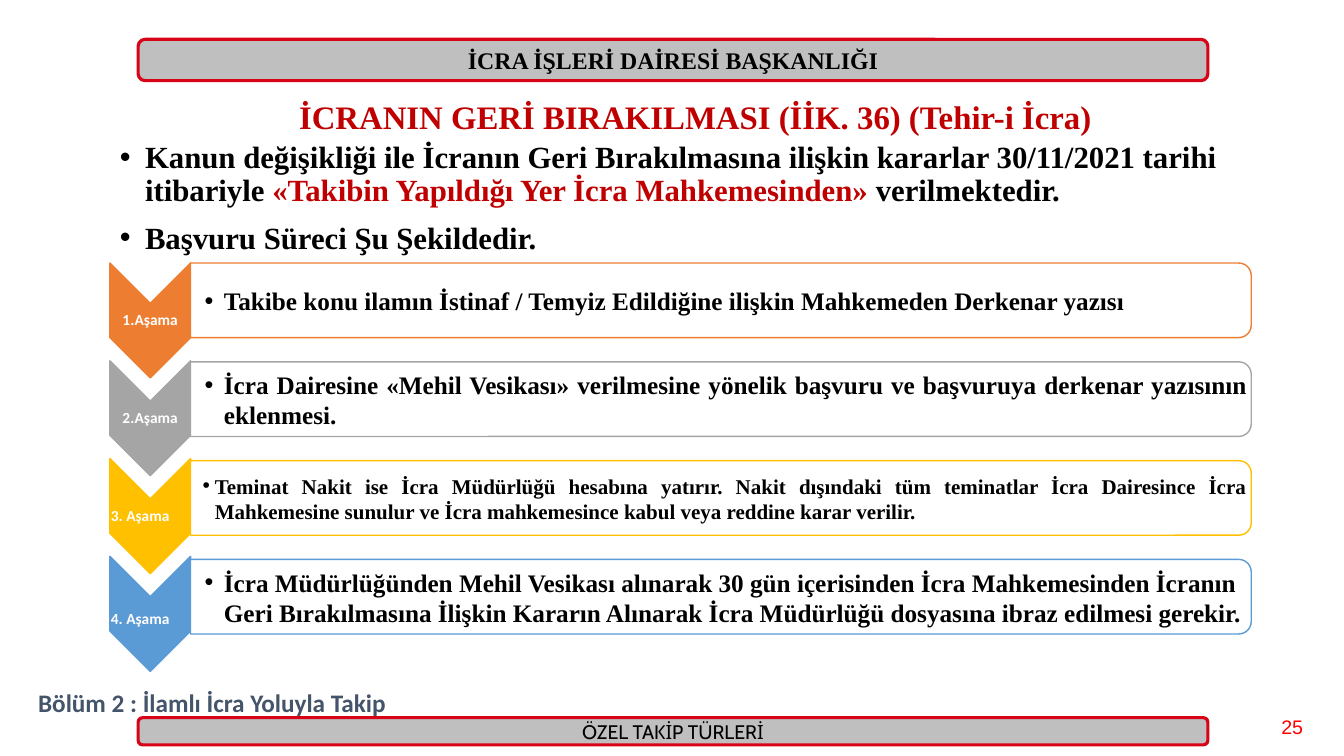
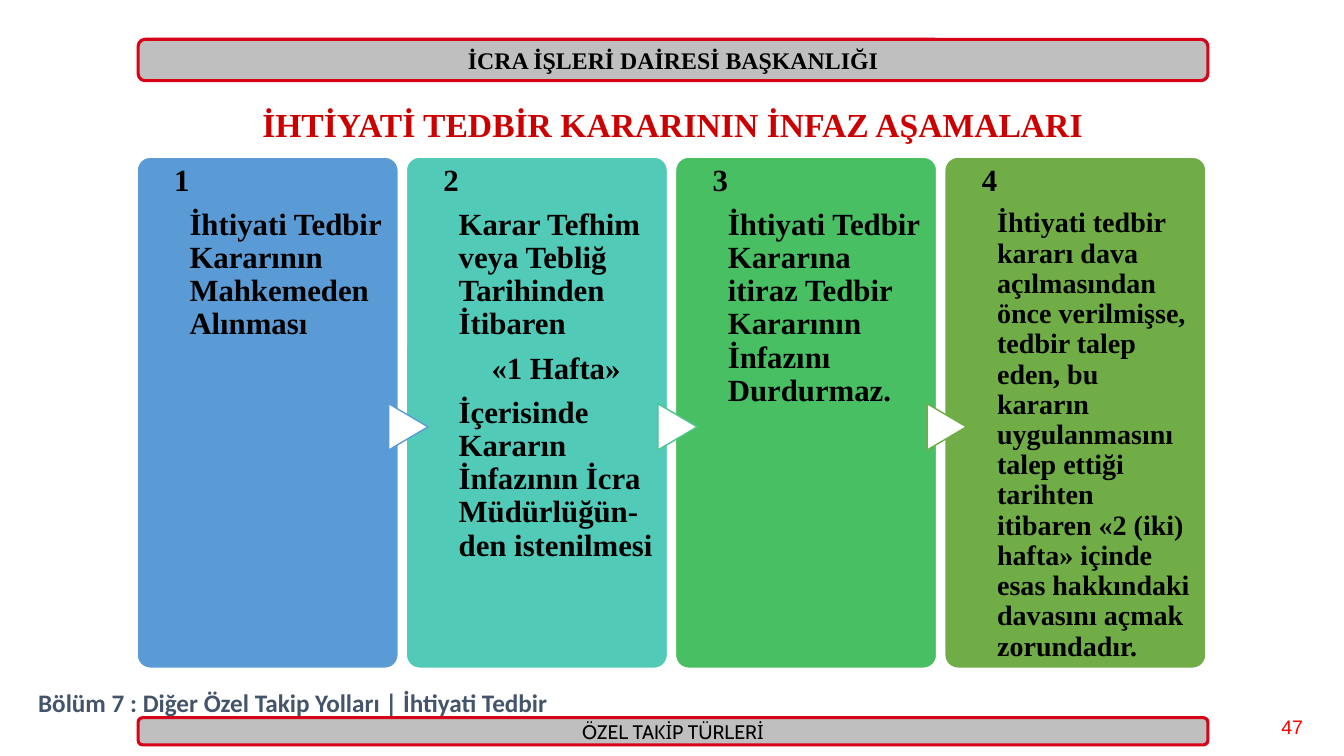
"""Build two slides on enforcement law: a staged application process and a four-step injunction."""
from dataclasses import dataclass, replace

from lxml import etree
from pptx import Presentation
from pptx.dml.color import RGBColor
from pptx.enum.shapes import MSO_SHAPE
from pptx.enum.text import MSO_ANCHOR, PP_ALIGN
from pptx.oxml.ns import qn
from pptx.util import Inches, Pt

ROUNDED = MSO_SHAPE.ROUNDED_RECTANGLE
CHEVRON = MSO_SHAPE.CHEVRON
ROUND_TOP = MSO_SHAPE.ROUND_2_SAME_RECTANGLE
TRIANGLE = MSO_SHAPE.FLOWCHART_EXTRACT
TOP, MIDDLE = MSO_ANCHOR.TOP, MSO_ANCHOR.MIDDLE
LEFT, CENTER, RIGHT, JUSTIFY = PP_ALIGN.LEFT, PP_ALIGN.CENTER, PP_ALIGN.RIGHT, PP_ALIGN.JUSTIFY

BLACK = RGBColor(0x00, 0x00, 0x00)
WHITE = RGBColor(0xFF, 0xFF, 0xFF)
BAND_GRAY = RGBColor(0xBF, 0xBF, 0xBF)
BAND_RED = RGBColor(0xD7, 0x03, 0x17)
NUMBER_RED = RGBColor(0xFF, 0x00, 0x00)
DARK_RED = RGBColor(0xC0, 0x00, 0x00)
TITLE_RED = RGBColor(0xCC, 0x00, 0x00)
SLATE = RGBColor(0x44, 0x54, 0x6A)
ORANGE = RGBColor(0xED, 0x7D, 0x31)
GRAY = RGBColor(0xA5, 0xA5, 0xA5)
GOLD = RGBColor(0xFF, 0xC0, 0x00)
BLUE = RGBColor(0x5B, 0x9B, 0xD5)
TEAL = RGBColor(0x52, 0xCA, 0xB8)
SEA_GREEN = RGBColor(0x4D, 0xC5, 0x8D)
GREEN = RGBColor(0x49, 0xBF, 0x64)
OLIVE = RGBColor(0x70, 0xAD, 0x47)

DEFAULT_INSETS = (0.1, 0.05, 0.1, 0.05)
THIN_INSETS = (0.01, 0.01, 0.01, 0.01)


@dataclass(frozen=True)
class TextStyle:
    """Hold the look of every paragraph in one box."""
    size: float
    color: RGBColor = BLACK
    font: str = "Times New Roman"
    bold: bool = True
    align: PP_ALIGN = LEFT
    line_spacing: float = 1.0
    space_before: float = 0
    space_after: float = 0
    bullet_indent: float = 0


HEADER = TextStyle(17, align=CENTER)
FOOTER = TextStyle(14, font="Cabin", bold=False, align=CENTER)
PAGE_NUMBER = TextStyle(14, NUMBER_RED, "Arial", False)
SECTION = TextStyle(18, SLATE, "Calibri")
TITLE = TextStyle(24, TITLE_RED, align=CENTER, line_spacing=0.9)
INTRO = TextStyle(22, line_spacing=0.9, space_before=10, bullet_indent=0.25)
STAGE_LABEL = TextStyle(11, WHITE, "Calibri", line_spacing=0.9)
STAGE_TEXT = TextStyle(18, align=JUSTIFY, bullet_indent=0.19)
CARD_TEXT = TextStyle(22, line_spacing=0.9, space_after=7.7)
CARD_NUMBER = replace(CARD_TEXT, align=RIGHT)

STAGES = [
    ("1.Aşama", "Takibe konu ilamın İstinaf / Temyiz Edildiğine ilişkin Mahkemeden Derkenar yazısı",
     ORANGE, replace(STAGE_LABEL, align=CENTER), STAGE_TEXT, 0.14),
    ("2.Aşama", "İcra Dairesine «Mehil Vesikası» verilmesine yönelik başvuru ve başvuruya derkenar "
     "yazısının eklenmesi.",
     GRAY, replace(STAGE_LABEL, align=CENTER), STAGE_TEXT, 0.14),
    ("3. Aşama", "Teminat Nakit ise İcra Müdürlüğü hesabına yatırır. Nakit dışındaki tüm teminatlar "
     "İcra Dairesince İcra Mahkemesine sunulur ve İcra mahkemesince kabul veya reddine karar verilir.",
     GOLD, STAGE_LABEL, replace(STAGE_TEXT, size=15, bullet_indent=0.12), 0.12),
    ("4. Aşama", "İcra Müdürlüğünden Mehil Vesikası alınarak 30 gün içerisinden İcra Mahkemesinden "
     "İcranın Geri Bırakılmasına İlişkin Kararın Alınarak İcra Müdürlüğü dosyasına ibraz edilmesi gerekir.",
     BLUE, replace(STAGE_LABEL, line_spacing=1.5), replace(STAGE_TEXT, align=LEFT), 0.14),
]

CARDS = [
    (["İhtiyati Tedbir Kararının Mahkemeden Alınması"], BLUE, None, 22),
    (["Karar Tefhim veya Tebliğ Tarihinden İtibaren", "«1 Hafta»",
      "İçerisinde Kararın İnfazının İcra Müdürlüğün-den istenilmesi"], TEAL, BLUE, 22),
    (["İhtiyati Tedbir Kararına itiraz Tedbir Kararının İnfazını Durdurmaz."], GREEN, SEA_GREEN, 22),
    (["İhtiyati tedbir kararı dava açılmasından önce verilmişse, tedbir talep eden, bu kararın "
      "uygulanmasını talep ettiği tarihten itibaren «2 (iki) hafta» içinde esas hakkındaki davasını "
      "açmak zorundadır."], OLIVE, OLIVE, 20),
]


def add_bullet(paragraph, indent):
    """Give a paragraph a round bullet with a hanging indent."""
    properties = paragraph._p.get_or_add_pPr()
    properties.set("marL", str(Inches(indent)))
    properties.set("indent", str(-Inches(indent)))
    etree.SubElement(properties, qn("a:buFont")).set("typeface", "Arial")
    etree.SubElement(properties, qn("a:buChar")).set("char", "•")


def write(shape, paragraphs, style, anchor=TOP, insets=DEFAULT_INSETS):
    """Write styled paragraphs, each a string or a list of (text, colour) runs."""
    frame = shape.text_frame
    frame.word_wrap = True
    frame.vertical_anchor = anchor
    frame.margin_left, frame.margin_top, frame.margin_right, frame.margin_bottom = map(Inches, insets)
    for index, content in enumerate(paragraphs):
        paragraph = frame.add_paragraph() if index else frame.paragraphs[0]
        paragraph.alignment = style.align
        paragraph.line_spacing = style.line_spacing
        paragraph.space_before = Pt(style.space_before if index else 0)
        paragraph.space_after = Pt(style.space_after)
        if style.bullet_indent:
            add_bullet(paragraph, style.bullet_indent)
        font = paragraph.font
        font.name, font.size, font.bold = style.font, Pt(style.size), style.bold
        font.color.rgb = style.color
        if isinstance(content, str):
            paragraph.add_run().text = content
            continue
        for text, color in content:
            run = paragraph.add_run()
            run.text = text
            run.font.color.rgb = color


def add_text(slide, box, paragraphs, style, anchor=TOP, insets=DEFAULT_INSETS):
    """Add a text box and return it."""
    shape = slide.shapes.add_textbox(*map(Inches, box))
    write(shape, paragraphs, style, anchor, insets)
    return shape


def add_block(slide, preset, box, fill, line, line_width=1, rotation=0):
    """Add a filled and outlined preset shape and return it."""
    shape = slide.shapes.add_shape(preset, *map(Inches, box))
    shape.shadow.inherit = False
    shape.fill.solid()
    shape.fill.fore_color.rgb = fill
    shape.line.color.rgb = line
    shape.line.width = Pt(line_width)
    shape.rotation = rotation
    return shape


def add_framed_slide(presentation, number, section):
    """Add a slide with the shared bands, section name and page number."""
    slide = presentation.slides.add_slide(presentation.slide_layouts[6])
    for top, height, text, style in ((0.39, 0.41, "İCRA İŞLERİ DAİRESİ BAŞKANLIĞI", HEADER),
                                     (7.12, 0.27, "ÖZEL TAKİP TÜRLERİ", FOOTER)):
        band = add_block(slide, ROUNDED, (1.37, top, 10.61, height), BAND_GRAY, BAND_RED, 2.25)
        write(band, [text], style, MIDDLE)
    add_text(slide, (12.61, 7.04, 0.45, 0.27), [str(number)], PAGE_NUMBER)
    add_text(slide, (0.28, 6.77, 11.58, 0.4), [section], SECTION)
    return slide


def add_stage(slide, index, label, text, color, label_style, text_style, left_inset):
    """Add one chevron with its label and the explanation bar beside it."""
    chevron_top = 2.78 + 0.97 * index
    bar_top = -2.28 + 0.98 * index
    add_block(slide, CHEVRON, (0.92, chevron_top, 1.14, 0.8), color, color, rotation=90)
    add_text(slide, (1.09, chevron_top + 0.23, 0.8, 0.34), [label], label_style, MIDDLE, THIN_INSETS)
    add_block(slide, ROUND_TOP, (6.78, bar_top, 0.74, 10.52), WHITE, color, rotation=90)
    add_text(slide, (1.89, bar_top + 4.93, 10.49, 0.67), [text], text_style, MIDDLE,
             (left_inset, 0.01, 0.01, 0.01))


def add_card(slide, index, paragraphs, fill, arrow_line, size):
    """Add one numbered card and the arrow leading into it."""
    left, top, height = 1.36 + 2.67 * index, 1.56, 5.07
    card = add_block(slide, ROUNDED, (left, top, 2.59, height), fill, WHITE)
    card.adjustments[0] = 0.05
    add_text(slide, (left, top, 0.52, 0.5), [str(index + 1)], CARD_NUMBER, insets=(0, 0.08, 0, 0))
    if arrow_line is not None:
        add_block(slide, TRIANGLE, (left - 0.21, 4.04, 0.46, 0.39), WHITE, arrow_line, rotation=90)
    body = add_text(slide, (left + 0.52, top + 0.51, 1.93, height - 0.51), paragraphs,
                    replace(CARD_TEXT, size=size), insets=(0, 0, 0, 0))
    for paragraph in body.text_frame.paragraphs:
        if paragraph.text.startswith("«"):
            paragraph.alignment = CENTER


def build_stay_slide(presentation):
    """Build the slide on staying enforcement."""
    slide = add_framed_slide(presentation, 25, "Bölüm 2 : İlamlı İcra Yoluyla Takip")
    add_text(slide, (1.78, 0.95, 10.23, 0.48), ["İCRANIN GERİ BIRAKILMASI (İİK. 36) (Tehir-i İcra)"],
             replace(TITLE, size=23.4, color=DARK_RED))
    add_text(slide, (1.09, 1.36, 11.14, 1.25), [
        [("Kanun değişikliği ile İcranın Geri Bırakılmasına ilişkin kararlar 30/11/2021 tarihi itibariyle ",
          BLACK),
         ("«Takibin Yapıldığı Yer İcra Mahkemesinden» ", DARK_RED),
         ("verilmektedir.", BLACK)],
        "Başvuru Süreci Şu Şekildedir.",
    ], INTRO)
    for index, stage in enumerate(STAGES):
        add_stage(slide, index, *stage)


def build_injunction_slide(presentation):
    """Build the slide on the steps of an injunction."""
    slide = add_framed_slide(presentation, 47, "Bölüm 7 : Diğer Özel Takip Yolları | İhtiyati Tedbir")
    for index, card in enumerate(CARDS):
        add_card(slide, index, *card)
    add_text(slide, (1.92, 1.03, 9.5, 0.54), ["İHTİYATİ TEDBİR KARARININ İNFAZ AŞAMALARI"], TITLE)


def main():
    """Build and save the presentation."""
    presentation = Presentation()
    presentation.slide_width, presentation.slide_height = Inches(13.33), Inches(7.5)
    build_stay_slide(presentation)
    build_injunction_slide(presentation)
    presentation.save("out.pptx")


if __name__ == "__main__":
    main()
